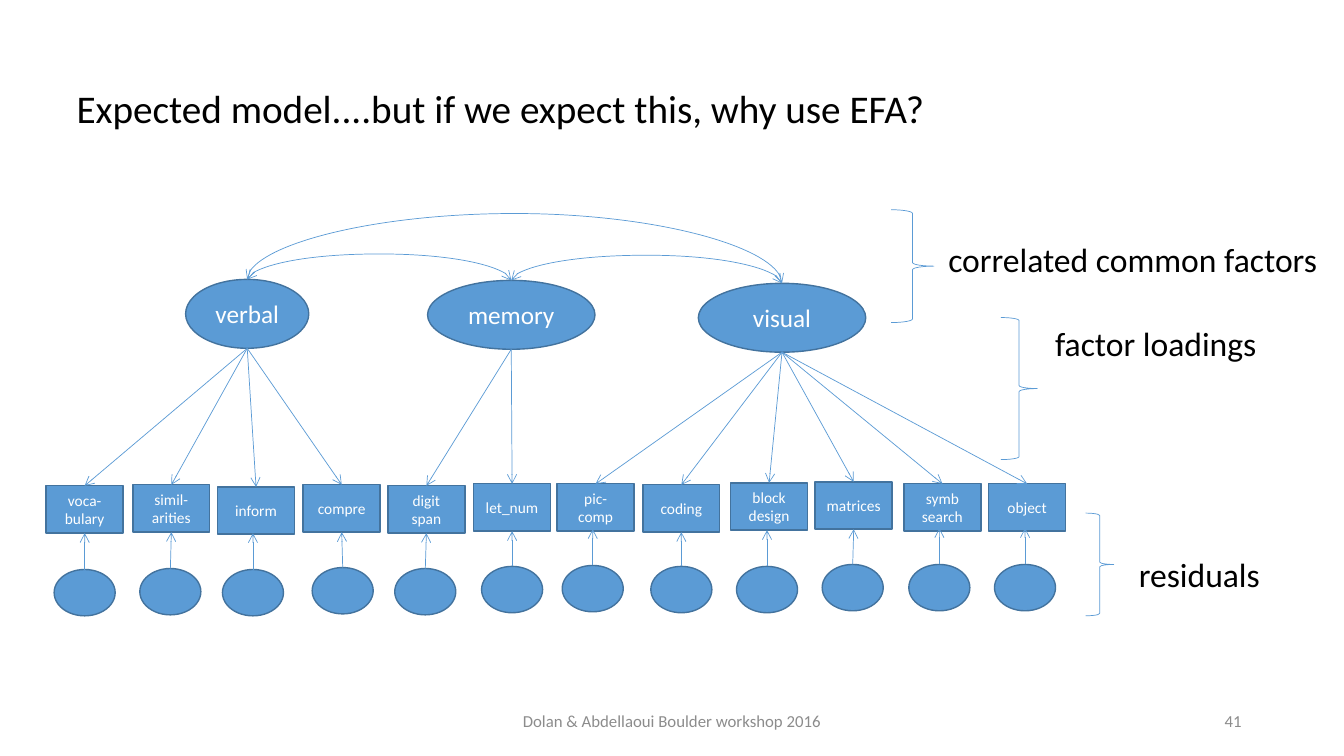
import pptx
import pptx.dml.color
import pptx.enum.shapes
import pptx.enum.text
import pptx.util
from lxml import etree
from pptx.oxml.ns import qn

Pt = pptx.util.Pt
KIND = pptx.enum.shapes.MSO_SHAPE
LINK = pptx.enum.shapes.MSO_CONNECTOR
ALIGN = pptx.enum.text.PP_ALIGN
ANCHOR = pptx.enum.text.MSO_ANCHOR
BLUE, EDGE, WHITE, BLACK, GREY = "5B9BD5", "43739E", "FFFFFF", "000000", "8C8C8C"


def style(shape, size=11, ink=WHITE, fill=None, line=None, weight=1, align=ALIGN.CENTER):
    """Set fill, outline and text of a shape, or the line of a connector."""
    color = pptx.dml.color.RGBColor.from_string
    if fill:
        shape.fill.solid()
        shape.fill.fore_color.rgb = color(fill)
    if line:
        shape.line.color.rgb = color(line)
        shape.line.width = Pt(weight)
    if not shape.has_text_frame:
        return
    for para in shape.text_frame.paragraphs:
        para.alignment = align
        for run in para.runs:
            run.font.name = "Calibri"
            run.font.size = Pt(size)
            run.font.color.rgb = color(ink)


def arrow(kind, x1, y1, x2, y2, ends=("tailEnd",)):
    link = slide.shapes.add_connector(kind, Pt(x1), Pt(y1), Pt(x2), Pt(y2))
    style(link, line=BLUE, weight=0.5)
    for end in ends:
        etree.SubElement(link.line._get_or_add_ln(), qn("a:" + end), type="arrow")
    etree.SubElement(link._element.spPr, qn("a:effectLst"))
    return link


deck = pptx.Presentation()
deck.slide_width, deck.slide_height = Pt(960), Pt(540)
slide = deck.slides.add_slide(deck.slide_layouts[5])

# Title
title = slide.shapes.title
title.left, title.top, title.width, title.height = Pt(47.5), Pt(56.9), Pt(634), Pt(41)
title.text_frame.text = "Expected model....but if we expect this, why use EFA?"
title.text_frame.word_wrap = False
title.text_frame.auto_size = pptx.enum.text.MSO_AUTO_SIZE.NONE
title.text_frame.vertical_anchor = ANCHOR.TOP
style(title, 28, BLACK, align=ALIGN.LEFT)

# Observed tests and residuals: label, box centre and top, oval centre and top
tests = [
    ("voca-bulary", 60.5, 347, 60.5, 406.8),
    ("simil-arities", 122.4, 346.3, 121.7, 406.1),
    ("inform", 182.9, 347.8, 180.7, 406.8),
    ("compre", 244.1, 346.3, 244.8, 405.4),
    ("digit span", 304.6, 347, 303.8, 406.1),
    ("let_num", 365.8, 345.6, 365.8, 404.6),
    ("pic-\ncomp", 425.5, 345.6, 423.4, 403.9),
    ("coding", 486.7, 346.3, 486.7, 404.6),
    ("block\ndesign", 549.4, 344.9, 547.9, 404.6),
    ("matrices", 609.8, 344.2, 609.1, 403.2),
    ("symb search", 673.2, 345.6, 671, 403.2),
    ("object", 733.7, 345.6, 732.2, 403.2),
]
box_w, box_h, oval_w, oval_h, gap = 55, 33.8, 43.6, 33.1, 25.9
boxes = []
for label, box_x, box_y, oval_x, oval_y in tests:
    box = slide.shapes.add_shape(
        KIND.RECTANGLE, Pt(box_x - box_w / 2), Pt(box_y), Pt(box_w), Pt(box_h))
    oval = slide.shapes.add_shape(
        KIND.OVAL, Pt(oval_x - oval_w / 2), Pt(oval_y), Pt(oval_w), Pt(oval_h))
    box.text_frame.text = label
    box.text_frame.vertical_anchor = ANCHOR.MIDDLE
    for shape in (box, oval):
        shape.shadow.inherit = False
        style(shape, fill=BLUE, line=EDGE)
    link = arrow(LINK.STRAIGHT, oval_x, oval_y, oval_x, oval_y - gap)
    link.begin_connect(oval, 0)
    if abs(box_x - oval_x) < 1:
        link.end_connect(box, 2)
    boxes.append(box)

# Common factors: label, centre, top, width, first and last test
factors = [
    ("verbal", 176.6, 199.6, 88, 0, 4),
    ("memory", 365.2, 200.3, 119.6, 4, 6),
    ("visual", 558.6, 202.4, 119.6, 6, 12),
]
high = 49.2
for label, x, y, width, first, last in factors:
    factor = slide.shapes.add_shape(
        KIND.OVAL, Pt(x - width / 2), Pt(y), Pt(width), Pt(high))
    factor.shadow.inherit = False
    factor.text_frame.text = label
    factor.text_frame.vertical_anchor = ANCHOR.MIDDLE
    style(factor, 18, fill=BLUE, line=EDGE)
    for box, test in zip(boxes[first:last], tests[first:last]):
        link = arrow(LINK.STRAIGHT, x, y + high, test[1], test[2])
        link.end_connect(box, 0)

# Correlations: a curved connector turned on its side, bowed up by its lift
for start, stop, lift in [(0, 1, 18), (1, 2, 18), (0, 2, 47)]:
    x1, y1 = factors[start][1:3]
    x2, y2 = factors[stop][1:3]
    span, drop = x2 - x1, y2 - y1
    arc = arrow(LINK.CURVE, x1, y1, x2, y2, ("headEnd", "tailEnd"))
    arc.left, arc.top = Pt((x1 + x2 - drop) / 2), Pt((y1 + y2 - span) / 2)
    arc.width, arc.height = Pt(drop), Pt(span)
    frame = arc._element.spPr.find(qn("a:xfrm"))
    frame.set("rot", str(270 * 60000))
    frame.set("flipH", "1")
    shape = arc._element.spPr.find(qn("a:prstGeom"))
    guides = shape.find(qn("a:avLst"))
    if guides is None:
        guides = etree.SubElement(shape, qn("a:avLst"))
    bow = round(-lift / drop * 100000)
    etree.SubElement(guides, qn("a:gd"), name="adj1", fmla=f"val {bow}")

# Braces
for x, y, width, height in [
    (636.5, 149.8, 30.6, 80.6), (715, 226.8, 25.9, 101.5), (775.4, 366.5, 20.2, 73.4),
]:
    brace = slide.shapes.add_shape(KIND.RIGHT_BRACE, Pt(x), Pt(y), Pt(width), Pt(height))
    brace.shadow.inherit = False
    brace.fill.background()
    style(brace, line=BLUE, weight=0.5)

# Captions and footer
for words, x, y, width, height, size, ink, align, anchor, wrap in [
    ("correlated common factors", 670.3, 167, 280, 36, 24, BLACK, ALIGN.LEFT, ANCHOR.TOP, False),
    ("factor loadings", 746.6, 226.8, 160, 36, 24, BLACK, ALIGN.LEFT, ANCHOR.TOP, False),
    ("residuals", 806.4, 392.4, 102, 36, 24, BLACK, ALIGN.LEFT, ANCHOR.TOP, False),
    ("Dolan & Abdellaoui Boulder workshop 2016", 318, 500.5, 324, 28.8, 12, GREY,
     ALIGN.CENTER, ANCHOR.MIDDLE, True),
    ("41", 678, 500.5, 216, 28.8, 12, GREY, ALIGN.RIGHT, ANCHOR.MIDDLE, True),
]:
    note = slide.shapes.add_textbox(Pt(x), Pt(y), Pt(width), Pt(height))
    note.text_frame.text = words
    note.text_frame.word_wrap = wrap
    note.text_frame.vertical_anchor = anchor
    style(note, size, ink, align=align)

deck.save("out.pptx")
